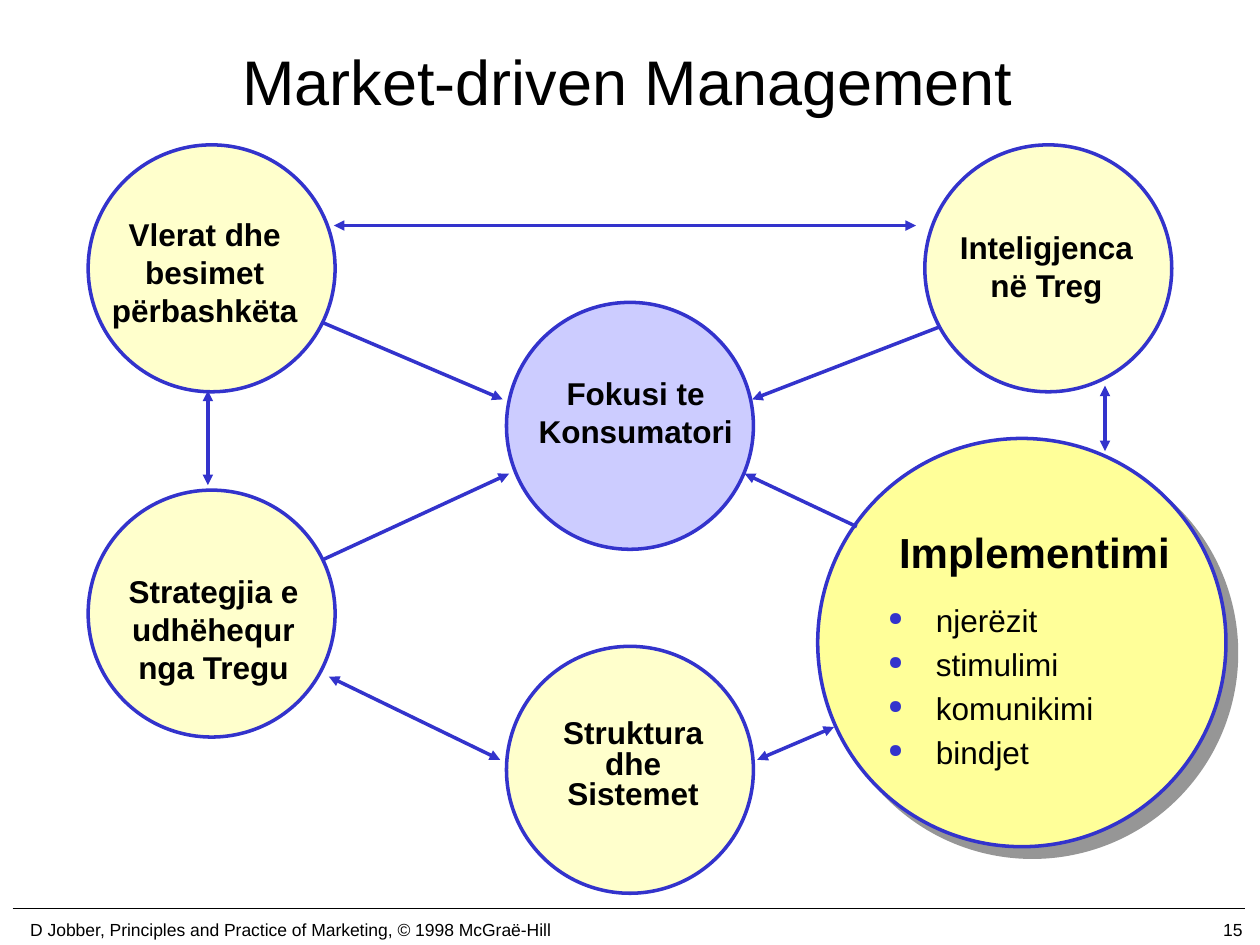
from pptx import Presentation
from pptx import util as u
from pptx.dml.color import RGBColor
from pptx.enum import shapes, text
from pptx.oxml.ns import qn
from lxml import etree

FONT = "Arial"
BLUE, CREAM, LILAC, GOLD = "3333CC", "FFFFCC", "CCCCFF", "FFFF99"
BLACK, GREY = "000000", "969696"
SIDE = 1.96
MID = text.MSO_ANCHOR.MIDDLE
LEFT, CENTER, RIGHT = (text.PP_ALIGN.LEFT, text.PP_ALIGN.CENTER,
                       text.PP_ALIGN.RIGHT)


def hue(code):
    return RGBColor.from_string(code)


def add(parent, tag, **attrs):
    node = etree.SubElement(parent, qn(tag))
    for key, val in attrs.items():
        node.set(key, str(val))
    return node


def place(shape, box):
    for key, val in zip(("left", "top", "width", "height"), box):
        setattr(shape, key, u.Inches(val))


def style(para, align, size, bold=False, **more):
    for key, val in {"alignment": align, **more}.items():
        setattr(para, key, val)
    looks = {"name": FONT, "size": u.Pt(size), "bold": bold}
    for key, val in looks.items():
        setattr(para.font, key, val)
    para.font.color.rgb = hue(BLACK)


def label(slide, box, words, align=CENTER, size=18, bold=True,
          wrap=True, anchor=text.MSO_ANCHOR.TOP, **more):
    shape = slide.shapes.add_textbox(0, 0, 0, 0)
    place(shape, box)
    frame = shape.text_frame
    frame.word_wrap = wrap
    frame.vertical_anchor = anchor
    frame.text = words
    style(frame.paragraphs[0], align, size, bold, **more)


def disc(slide, box, fill):
    shape = slide.shapes.add_shape(shapes.MSO_SHAPE.OVAL, 0, 0, 0, 0)
    place(shape, box)
    shape.shadow.inherit = False
    shape.fill.solid()
    shape.fill.fore_color.rgb = hue(fill)
    shape.line.color.rgb = hue(BLUE)
    shape.line.width = u.Pt(2)
    return shape


def arrow(slide, start, end, ends=(), color=BLUE, width=2):
    ends_at = [u.Inches(v) for v in (*start, *end)]
    line = slide.shapes.add_connector(shapes.MSO_CONNECTOR.STRAIGHT, *ends_at)
    line.line.color.rgb = hue(color)
    line.line.width = u.Pt(width)
    for tag in ends:
        add(line.line._ln, tag, type="triangle")
    add(line._element.spPr, "a:effectLst")


def footer(slide, top):
    arrow(slide, (0.1, top), (9.88, top), color=BLACK, width=1)
    look = {"size": 10, "bold": False, "wrap": False, "anchor": MID}
    label(slide, (7.88, top + 0.04, 2.08, 0.25), "15", RIGHT, **look)
    label(slide, (0, top + 0.04, 4.61, 0.25),
          "D Jobber, Principles and Practice of Marketing, "
          "© 1998 McGraë-Hill", **look)


def bullets(slide, box, items):
    shape = slide.shapes.add_textbox(0, 0, 0, 0)
    place(shape, box)
    frame = shape.text_frame
    frame.word_wrap = True
    for i, item in enumerate(items):
        para = frame.paragraphs[0] if i == 0 else frame.add_paragraph()
        para.text = item
        para.space_before = u.Pt(3.6 if i else 0)
        props = para._p.get_or_add_pPr()
        props.set("marL", str(u.Inches(0.38)))
        props.set("indent", str(u.Inches(-0.38)))
        add(add(props, "a:buClr"), "a:srgbClr", val=BLUE)
        add(props, "a:buSzPct", val=60000)
        add(props, "a:buChar", char="●")
        style(para, LEFT, 18)


def focus(slide, x, y, size):
    """Large shaded disc with a heading and a bullet list."""
    shape = disc(slide, (x, y, size, size), GOLD)
    glow = shape._element.spPr.find(qn("a:effectLst"))
    cast = add(glow, "a:outerShdw", dist=u.Pt(8.5), dir=45 * 60000,
               algn="ctr", rotWithShape=0)
    add(cast, "a:srgbClr", val=GREY)
    label(slide, (x + 0.29, y + 0.73, 2.86, 0.43), "Implementimi",
          size=24, line_spacing=0.8)
    bullets(slide, (x + 0.46, y + 1.24, 2.68, 2.06),
            ["njerëzit", "stimulimi", "komunikimi", "bindjet"])


def heading(slide, box):
    title = slide.shapes.title
    place(title, box)
    title.text_frame.text = "Market-driven Management"
    title.text_frame.vertical_anchor = MID
    style(title.text_frame.paragraphs[0], CENTER, 36)


def circles(slide):
    # Disc corner, fill, label offset, label size, wording, spacing
    west, mid, east = 0.7, 4.02, 7.34
    parts = [
        (mid, 5.13, CREAM, (0.18, 0.54, 1.65, 0.83),
         "Struktura dhe Sistemet", 0.8),
        (west, 1.15, CREAM, (0.09, 0.51, 1.67, 1.31),
         "Vlerat dhe besimet përbashkëta", 1.0),
        (east, 1.15, CREAM, (0.13, 0.61, 1.67, 1.01),
         "Inteligjenca në Treg", 1.0),
        (west, 3.89, CREAM, (0.16, 0.6, 1.67, 1.31),
         "Strategjia e udhëhequr nga Tregu", 1.0),
        (mid, 2.4, LILAC, (0.15, 0.52, 1.75, 1.01),
         "Fokusi te Konsumatori", 1.0),
    ]
    for x, y, fill, (dx, dy, w, h), words, gap in parts:
        disc(slide, (x, y, SIDE, SIDE), fill)
        label(slide, (x + dx, y + dy, w, h), words, line_spacing=gap)


def main():
    deck = Presentation()
    deck.slide_width, deck.slide_height = u.Inches(10), u.Inches(7.5)
    slide = deck.slides.add_slide(deck.slide_layouts[5])

    heading(slide, (0.73, 0.01, 8.5, 1.25))
    footer(slide, 7.21)
    focus(slide, 6.49, 3.48, 3.24)

    # Arrows into the centre lie behind the discs
    for start, end in [((6.8, 4.18), (5.91, 3.76)),
                       ((2.48, 4.48), (4.04, 3.76)),
                       ((7.65, 2.52), (5.97, 3.17)),
                       ((2.42, 2.5), (3.99, 3.17))]:
        arrow(slide, start, end, ["a:tailEnd"])

    circles(slide)

    # Two-way arrows around the ring
    for start, end in [((2.65, 1.79), (7.27, 1.79)),
                       ((1.65, 3.1), (1.65, 3.85)),
                       ((8.77, 3.06), (8.77, 3.58)),
                       ((2.61, 5.37), (3.97, 6.03)),
                       ((6.62, 5.77), (6.01, 6.03))]:
        arrow(slide, start, end, ["a:headEnd", "a:tailEnd"])

    deck.save("out.pptx")


if __name__ == "__main__":
    main()
